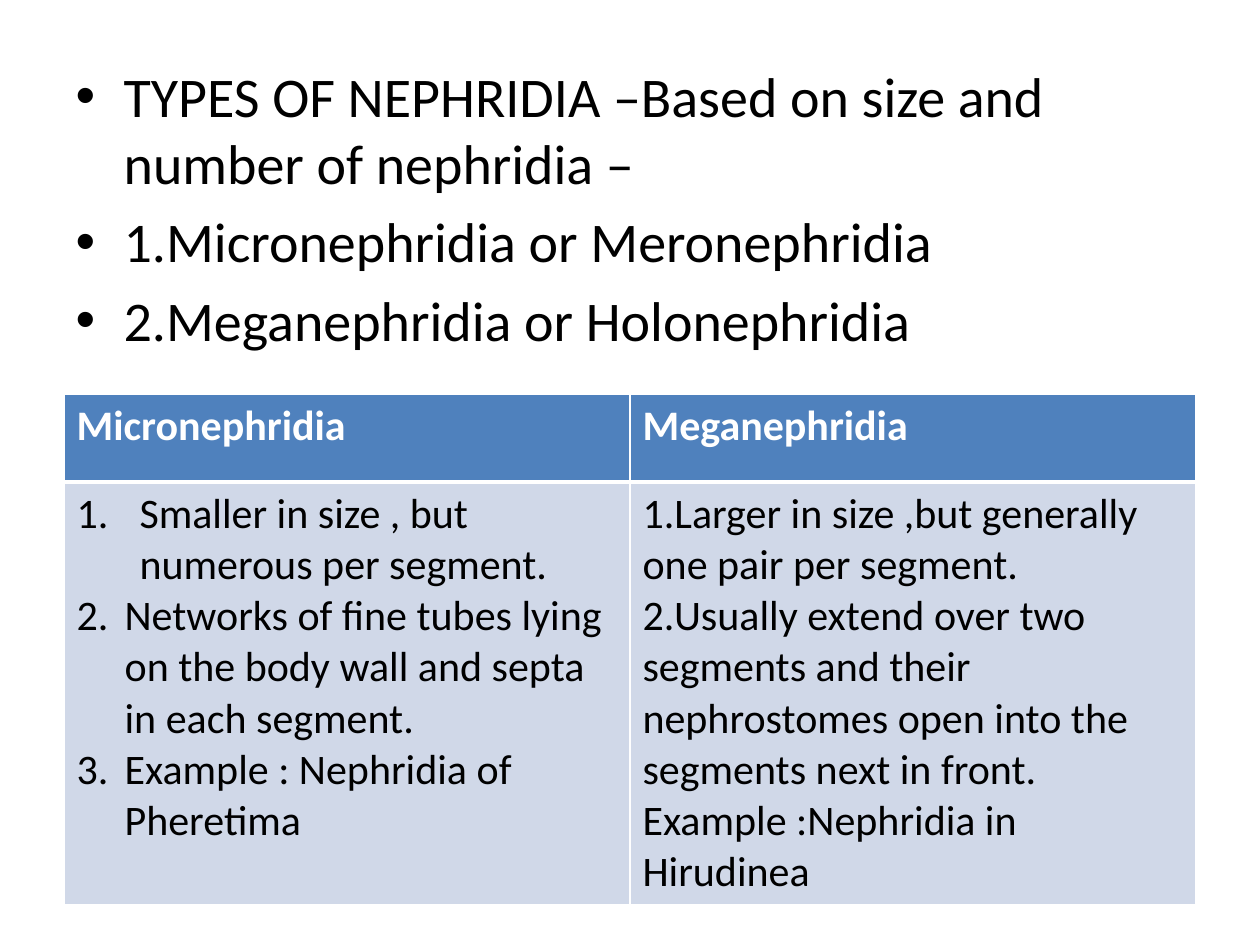
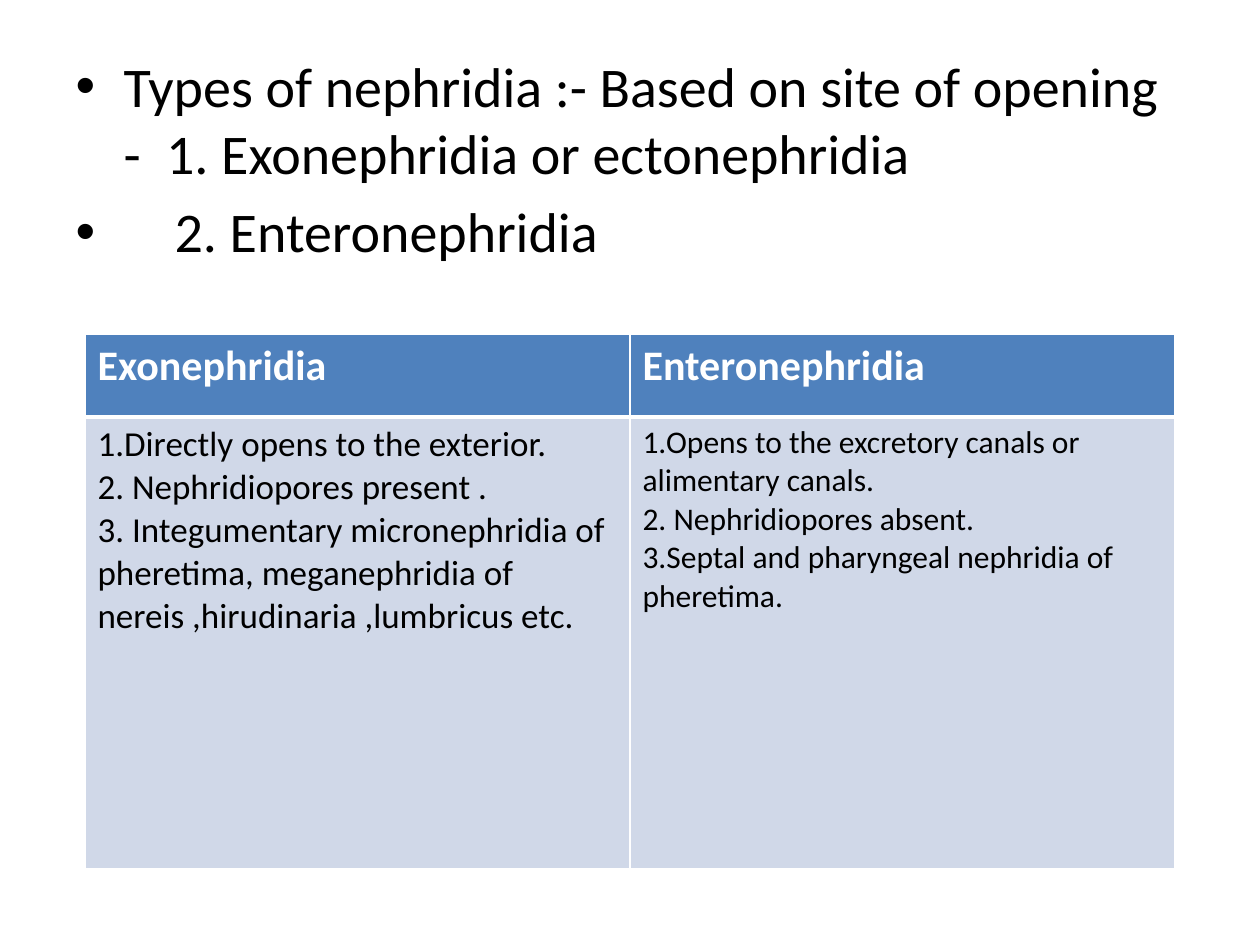
from pptx import Presentation
from pptx.dml.color import RGBColor
from pptx.enum.text import MSO_AUTO_SIZE
from pptx.oxml.ns import qn
from pptx.util import Pt
from lxml.etree import SubElement

PX_PER_INCH = 126
FONT = "Calibri"
COLORS = {"text": "000000", "header": "4F81BD", "body": "D0D8E8", "line": "FFFFFF"}
BULLET_INDENT = 48

# Bullets are (text, indent); a column holds its heading, text size and
# items, each item being (text, indent), where an indent of 0 means unnumbered.
SLIDES = [
    {
        "bullets_at": (63, 55, 1134, 789),
        "bullets": [
            ("TYPES OF NEPHRIDIA –Based on size and number of nephridia –", BULLET_INDENT),
            ("1.Micronephridia or Meronephridia", BULLET_INDENT),
            ("2.Meganephridia or Holonephridia", BULLET_INDENT),
        ],
        "table_at": (64, 394, 1132),
        "row_heights": (88, 407),
        "columns": [
            ("Micronephridia", 24, [
                ("Smaller in size , but numerous per segment.", 63),
                ("Networks of fine tubes lying on the body wall and septa in each segment.", 48),
                ("Example : Nephridia of Pheretima", 48),
            ]),
            ("Meganephridia", 24, [
                ("1.Larger in size ,but generally one pair per segment.", 0),
                ("2.Usually extend over two segments and their nephrostomes open into "
                 "the segments next in front.", 0),
                ("Example :Nephridia in Hirudinea", 0),
            ]),
        ],
    },
    {
        "bullets_at": (63, 45, 1134, 824),
        "bullets": [
            ("Types of nephridia :- Based on site of opening -  1. Exonephridia or ectonephridia",
             BULLET_INDENT),
            ("2. Enteronephridia", 99),
        ],
        "table_at": (85, 334, 1090),
        "row_heights": (83, 452),
        "columns": [
            ("Exonephridia", 20, [
                ("1.Directly opens to the exterior.", 0),
                ("2. Nephridiopores present .", 0),
                ("3. Integumentary micronephridia of pheretima, meganephridia of "
                 "nereis ,hirudinaria ,lumbricus etc.", 0),
            ]),
            ("Enteronephridia", 18, [
                ("1.Opens to the excretory canals or alimentary canals.", 0),
                ("2. Nephridiopores absent.", 0),
                ("3.Septal and pharyngeal nephridia of pheretima.", 0),
            ]),
        ],
    },
]


def px(length):
    return round(length * 914400 / PX_PER_INCH)


def color(name):
    return RGBColor.from_string(COLORS[name])


def add_span(paragraph, text, size, color_name, bold=False):
    span = paragraph.add_run()
    span.text = text
    span.font.name = FONT
    span.font.size = Pt(size)
    span.font.bold = bold
    span.font.color.rgb = color(color_name)


def set_hanging_indent(paragraph, indent):
    properties = paragraph._p.get_or_add_pPr()
    properties.set("marL", str(px(indent)))
    properties.set("indent", str(-px(indent)))
    return properties


def paragraphs_for(frame, items):
    """Yield one paragraph of the frame with each item."""
    for index, item in enumerate(items):
        yield (frame.add_paragraph() if index else frame.paragraphs[0]), item


def add_bullets(page, place, bullets):
    box = page.placeholders[1]
    box.left, box.top, box.width, box.height = map(px, place)
    box.text_frame.auto_size = MSO_AUTO_SIZE.NONE
    for paragraph, (text, indent) in paragraphs_for(box.text_frame, bullets):
        set_hanging_indent(paragraph, indent)
        add_span(paragraph, text, 32, "text")


def style_cell(cell, fill, thick_side):
    """Draw white borders, heavier on the side between header and body."""
    properties = cell._tc.get_or_add_tcPr()
    for side in "LRTB":
        width = Pt(3 if side == thick_side else 1)
        line = SubElement(properties, qn(f"a:ln{side}"), w=str(width))
        paint = SubElement(line, qn("a:solidFill"))
        SubElement(paint, qn("a:srgbClr"), val=COLORS["line"])
    cell.fill.solid()
    cell.fill.fore_color.rgb = color(fill)


def add_comparison(page, place, row_heights, columns):
    left, top, width = place
    table = page.shapes.add_table(
        len(row_heights), len(columns),
        px(left), px(top), px(width), px(sum(row_heights))).table
    for row, height in zip(table.rows, row_heights):
        row.height = px(height)
    for index, (heading, size, items) in enumerate(columns):
        table.columns[index].width = px(width / len(columns))
        header, body = table.cell(0, index), table.cell(1, index)
        style_cell(header, "header", "B")
        style_cell(body, "body", "T")
        add_span(header.text_frame.paragraphs[0], heading, 24, "line", bold=True)
        for paragraph, (text, indent) in paragraphs_for(body.text_frame, items):
            if indent:
                properties = set_hanging_indent(paragraph, indent)
                SubElement(properties, qn("a:buFont"), typeface="+mj-lt")
                SubElement(properties, qn("a:buAutoNum"), type="arabicPeriod")
            add_span(paragraph, text, size, "text")


def main():
    deck = Presentation()
    deck.slide_width, deck.slide_height = px(1260), px(945)
    for content in SLIDES:
        page = deck.slides.add_slide(deck.slide_layouts[1])
        title = page.shapes.title._element
        title.getparent().remove(title)
        add_bullets(page, content["bullets_at"], content["bullets"])
        add_comparison(page, content["table_at"], content["row_heights"], content["columns"])
    deck.save("out.pptx")


if __name__ == "__main__":
    main()
